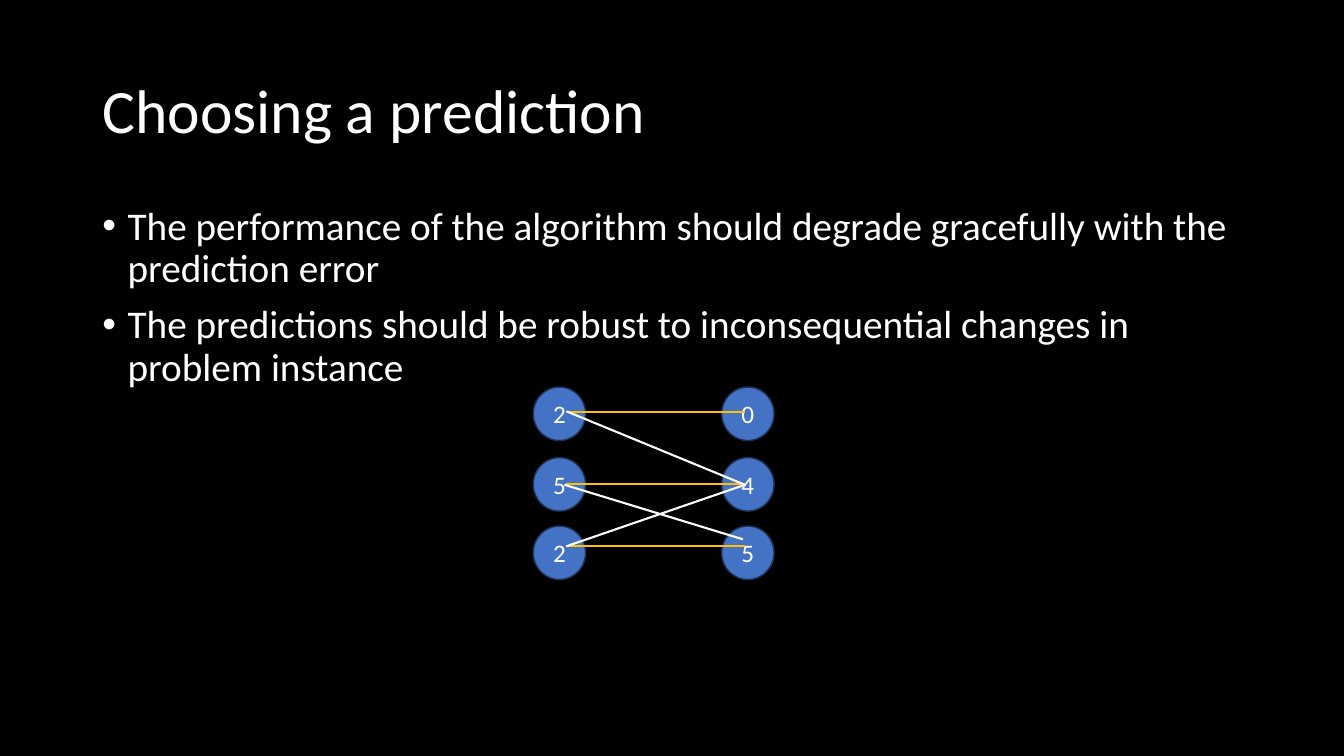
from pptx import Presentation
from pptx.dml.color import RGBColor as RGB
from pptx.enum.shapes import MSO_CONNECTOR as LINK, MSO_SHAPE as SHAPE
from pptx.enum.text import MSO_ANCHOR as ANCHOR, MSO_AUTO_SIZE as FIT, PP_ALIGN as ALIGN
from pptx.oxml.ns import qn
from pptx.util import Pt
from lxml.etree import SubElement as Sub

HUES = {"back": "000000", "text": "FFFFFF", "node": "4472C4",
        "rim": "1E3256", "match": "FFC000", "edge": "FFFFFF"}
FONT = "Calibri"

TITLE = "Choosing a prediction"
POINTS = [
    "The performance of the algorithm should degrade gracefully with the prediction error",
    "The predictions should be robust to inconsequential changes in problem instance",
]

# Bipartite graph: column lefts, row tops and node labels
COLS = [380.9, 515.5]
ROWS = [276.5, 326.9, 375.8]
LABELS = [["2", "5", "2"], ["0", "4", "5"]]
NODE = (37.4, 38.2)

# Edges: colour name, start, end
LEFT, RIGHT = 404.6, 532.1
EDGES = [
    ("match", (LEFT, 294.2), (RIGHT, 294.2)),
    ("match", (LEFT, 345.6), (RIGHT, 345.6)),
    ("edge", (LEFT, 293.8), (RIGHT, 346.3)),
    ("match", (LEFT, 390.2), (RIGHT, 390.2)),
    ("edge", (403.2, 346.3), (530.6, 385.2)),
    ("edge", (LEFT, 390.2), (RIGHT, 346.3)),
]


def hue(name):
    return RGB.from_string(HUES[name])


def add_run(para, text, size):
    run = para.add_run()
    run.text = text
    run.font.name = FONT
    run.font.size = Pt(size)
    run.font.color.rgb = hue("text")


def place(holder, left, top, width, height, anchor):
    holder.left, holder.top = Pt(left), Pt(top)
    holder.width, holder.height = Pt(width), Pt(height)
    frame = holder.text_frame
    frame.auto_size = FIT.NONE
    frame.word_wrap = True
    frame.vertical_anchor = anchor
    return frame


def add_title(slide):
    frame = place(slide.shapes.title, 66, 28.75, 828, 104.4, ANCHOR.MIDDLE)
    para = frame.paragraphs[0]
    para.alignment = ALIGN.LEFT
    para.line_spacing = 0.9
    add_run(para, TITLE, 44)


def add_list(slide):
    frame = place(slide.placeholders[1], 66, 143.75, 828, 342.6, ANCHOR.TOP)
    for i, text in enumerate(POINTS):
        para = frame.add_paragraph() if i else frame.paragraphs[0]
        para.line_spacing = 0.9
        para.space_before = Pt(10)
        props = para._p.get_or_add_pPr()
        props.set("marL", str(Pt(18)))
        props.set("indent", str(-Pt(18)))
        Sub(props, qn("a:buFont"), typeface="Arial")
        Sub(props, qn("a:buChar"), char="•")
        add_run(para, text, 28)


def add_node(slide, left, top, label):
    node = slide.shapes.add_shape(SHAPE.OVAL, Pt(left), Pt(top), *map(Pt, NODE))
    node.shadow.inherit = False
    node.fill.solid()
    node.fill.fore_color.rgb = hue("node")
    node.line.color.rgb = hue("rim")
    node.line.width = Pt(1)
    frame = node.text_frame
    frame.vertical_anchor = ANCHOR.MIDDLE
    para = frame.paragraphs[0]
    para.alignment = ALIGN.CENTER
    add_run(para, label, 18)


def add_edge(slide, name, start, end):
    edge = slide.shapes.add_connector(LINK.STRAIGHT, *map(Pt, start + end))
    edge.line.color.rgb = hue(name)
    edge.line.width = Pt(1.5)
    Sub(edge._element.spPr, qn("a:effectLst"))


def main():
    deck = Presentation()
    deck.slide_width, deck.slide_height = Pt(960), Pt(540)
    slide = deck.slides.add_slide(deck.slide_layouts[1])
    slide.background.fill.solid()
    slide.background.fill.fore_color.rgb = hue("back")

    # Text
    add_title(slide)
    add_list(slide)

    # Graph
    for left, labels in zip(COLS, LABELS):
        for top, label in zip(ROWS, labels):
            add_node(slide, left, top, label)
    for edge in EDGES:
        add_edge(slide, *edge)

    deck.save("out.pptx")


if __name__ == "__main__":
    main()
